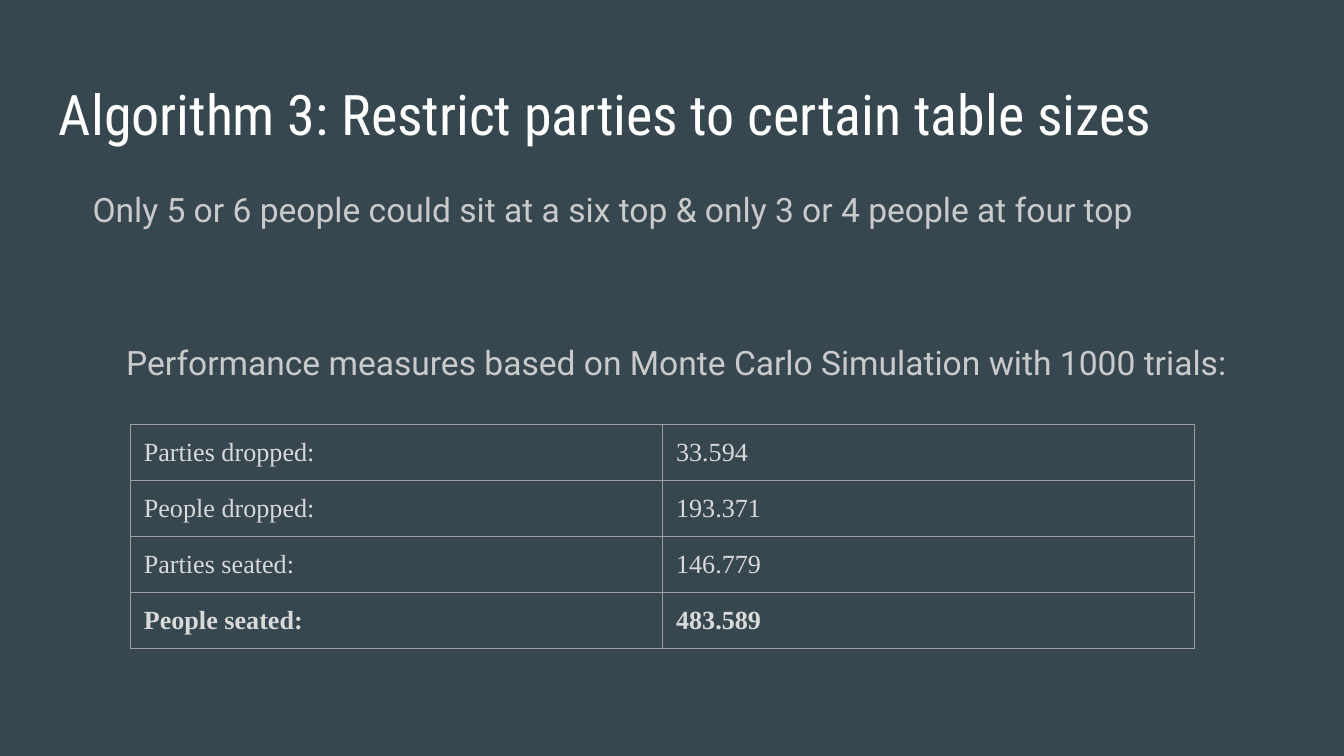
"""Build the slide on restricting parties to certain table sizes."""
from lxml import etree
from pptx import Presentation
from pptx.dml.color import RGBColor
from pptx.oxml import ns
from pptx.util import Inches, Pt

HUES = {"back": "37474F", "title": "FFFFFF", "body": "CACACA",
        "cell": "D9D9D9", "rule": "9E9E9E"}


def write(para, words, font="Roboto", size=18, hue="body", bold=False):
    """Add one formatted run to a paragraph."""
    run = para.add_run()
    run.text = words
    run.font.name = font
    run.font.size = Pt(size)
    run.font.bold = bold
    run.font.color.rgb = RGBColor.from_string(HUES[hue])


def frame(top, high):
    """Add a wrapping text box of full content width."""
    box = slide.shapes.add_textbox(Inches(0.34), Inches(top), Inches(9.32), Inches(high))
    area = box.text_frame
    area.word_wrap = True
    area.margin_left = area.margin_right = Inches(0.1)
    area.margin_top = area.margin_bottom = Inches(0.1)
    return area


deck = Presentation()
deck.slide_width = Inches(10)
deck.slide_height = deck.slide_width * 9 // 16
slide = deck.slides.add_slide(deck.slide_layouts[6])
slide.background.fill.solid()
slide.background.fill.fore_color.rgb = RGBColor.from_string(HUES["back"])

title = frame(0.49, 0.63)
write(title.paragraphs[0], "Algorithm 3: Restrict parties to certain table sizes",
      font="Roboto Condensed", size=30, hue="title")

body = frame(1.26, 3.74)
rule = body.paragraphs[0]
note = body.add_paragraph()
write(rule, "Only 5 or 6 people could sit at a six top & only 3 or 4 people at four top")
write(note, "Performance measures based on Monte Carlo Simulation with 1000 trials:")
for para, left, first, after in ((rule, 0.5, -0.25, 57), (note, 0.5, 0, 16)):
    para.line_spacing = 1.15
    para.space_after = Pt(after)
    props = para._p.get_or_add_pPr()
    props.set("marL", str(Inches(left)))
    props.set("indent", str(Inches(first)))

rows = [("Parties dropped:", "33.594"), ("People dropped:", "193.371"),
        ("Parties seated:", "146.779"), ("People seated:", "483.589")]
high = Inches(5) // 12
grid = slide.shapes.add_table(len(rows), 2, Inches(0.97), Inches(3.16),
                              Inches(7.92), high * len(rows)).table
grid.first_row = grid.horz_banding = False
for col in grid.columns:
    col.width = Inches(3.96)
for r, row in enumerate(rows):
    grid.rows[r].height = high
    for c, words in enumerate(row):
        cell = grid.cell(r, c)
        cell.margin_left = cell.margin_right = cell.margin_top = Inches(0.1)
        cell.margin_bottom = Inches(0.08)
        write(cell.text_frame.paragraphs[0], words, font="Times New Roman",
              size=14, hue="cell", bold=r == len(rows) - 1)
        props = cell._tc.get_or_add_tcPr()
        for side in ("lnL", "lnR", "lnT", "lnB"):
            line = etree.SubElement(props, ns.qn("a:" + side), w=str(Pt(0.75)))
            fill = etree.SubElement(line, ns.qn("a:solidFill"))
            etree.SubElement(fill, ns.qn("a:srgbClr"), val=HUES["rule"])
        cell.fill.background()

deck.save("out.pptx")
